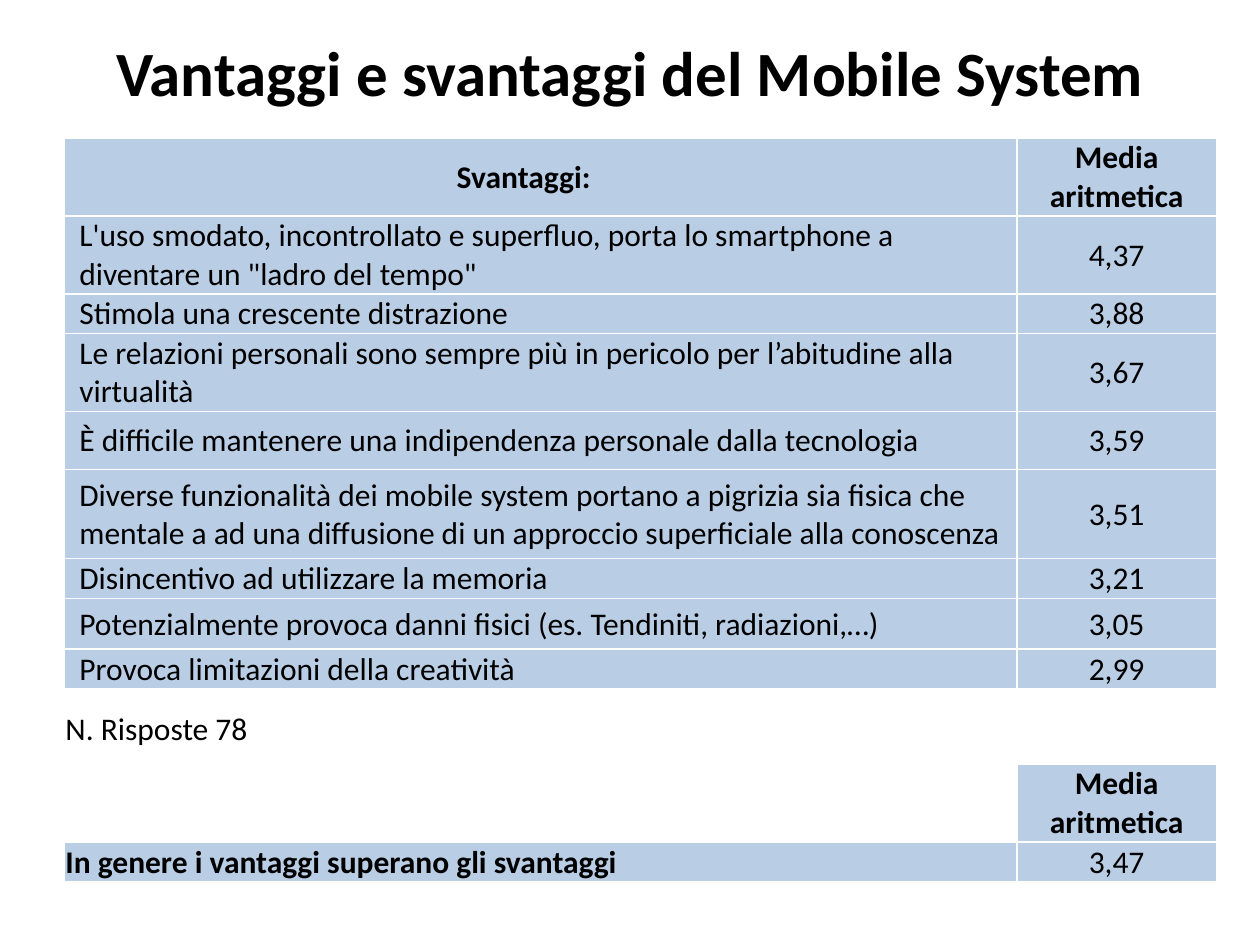
from lxml.etree import SubElement
from pptx import Presentation
from pptx.dml.color import RGBColor
from pptx.enum.text import MSO_ANCHOR as Anchor, PP_ALIGN as Align
from pptx.oxml import parse_xml
from pptx.oxml.ns import nsdecls, qn
from pptx.util import Cm, Pt

COLORS = {"band": "B9CDE5", "paper": "FFFFFF", "ink": "000000"}
TITLE = "Vantaggi e svantaggi del Mobile System"
MEAN = "Media aritmetica"
DRAWBACKS = [
    ("L'uso smodato, incontrollato e superfluo, porta lo smartphone a "
     "diventare un \"ladro del tempo\"", "4,37", 1.57),
    ("Stimola una crescente distrazione", "3,88", 0.8),
    ("Le relazioni personali sono sempre più in pericolo per l’abitudine alla virtualità",
     "3,67", 1.57),
    ("È difficile mantenere una indipendenza personale dalla tecnologia", "3,59", 1.17),
    ("Diverse funzionalità dei mobile system portano a pigrizia sia fisica che "
     "mentale a ad una diffusione di un approccio superficiale alla conoscenza", "3,51", 1.8),
    ("Disincentivo ad utilizzare la memoria", "3,21", 0.8),
    ("Potenzialmente provoca danni fisici (es. Tendiniti, radiazioni,…)", "3,05", 1.02),
    ("Provoca limitazioni della creatività", "2,99", 0.8),
]
ANSWERS = "N. Risposte 78"
OVERALL = ("In genere i vantaggi superano gli svantaggi", "3,47")
LEFT, COLUMNS = 1.3, (19.2, 4.02)
PLAIN = {"bold": False, "align": Align.LEFT, "fill": "band", "anchor": Anchor.MIDDLE,
         "left": 0.02, "right": 0.02}
ITEM = {**PLAIN, "left": 0.3}
VALUE = {**PLAIN, "align": Align.CENTER}
HEAD = {**VALUE, "bold": True}
BLANK = {**PLAIN, "fill": "paper"}


def set_font(font, size, bold):
    values = {"name": "Calibri", "size": Pt(size), "bold": bold}
    for key, value in values.items():
        setattr(font, key, value)
    font.color.rgb = RGBColor.from_string(COLORS["ink"])


def fill_cell(cell, text, style):
    cell.fill.solid()
    cell.fill.fore_color.rgb = RGBColor.from_string(COLORS[style["fill"]])
    layout = {"margin_left": Cm(style["left"]), "margin_right": Cm(style["right"]),
              "margin_top": Cm(0.02), "margin_bottom": 0, "vertical_anchor": style["anchor"]}
    for key, value in layout.items():
        setattr(cell, key, value)
    properties = cell._tc.get_or_add_tcPr()
    for position, side in enumerate("LRTB"):
        properties.insert(position, parse_xml(
            f'<a:ln{side} {nsdecls("a")} w="12700"><a:solidFill>'
            f'<a:srgbClr val="{COLORS["paper"]}"/></a:solidFill></a:ln{side}>'))
    paragraph = cell.text_frame.paragraphs[0]
    paragraph.alignment = style["align"]
    if text:
        run = paragraph.add_run()
        run.text = text
        set_font(run.font, 18, style["bold"])
    else:
        SubElement(paragraph._p, qn("a:endParaRPr"), sz="600")


def add_grid(slide, top, rows):
    height = sum(row[0] for row in rows)
    grid = slide.shapes.add_table(len(rows), len(COLUMNS), Cm(LEFT), Cm(top),
                                  Cm(sum(COLUMNS)), Cm(height)).table
    grid.first_row = grid.horz_banding = False
    for column, width in zip(grid.columns, COLUMNS):
        column.width = Cm(width)
    for index, (row_height, *entries) in enumerate(rows):
        grid.rows[index].height = Cm(row_height)
        for column, (text, style) in enumerate(entries):
            fill_cell(grid.cell(index, column), text, style)


def main():
    """Build the slide on the drawbacks of mobile systems."""
    deck = Presentation()
    deck.slide_width, deck.slide_height = Cm(25.4), Cm(19.05)
    slide = deck.slides.add_slide(deck.slide_layouts[5])

    title = slide.shapes.title
    title.left, title.top, title.width, title.height = Cm(1.27), Cm(0.36), Cm(22.86), Cm(2.16)
    title.text_frame.text = TITLE
    title.text_frame.vertical_anchor = Anchor.MIDDLE
    heading = title.text_frame.paragraphs[0]
    heading.alignment = Align.CENTER
    set_font(heading.runs[0].font, 36, True)

    blank = ("", BLANK)
    add_grid(slide, 2.78, [
        (1.57, ("Svantaggi:", {**HEAD, "right": 0.71}), (MEAN, HEAD)),
        *((height, (text, ITEM), (mean, VALUE)) for text, mean, height in DRAWBACKS),
        (0.41, blank, blank),
        (0.8, (ANSWERS, {**BLANK, "anchor": Anchor.BOTTOM}), blank),
    ])
    add_grid(slide, 15.4, [
        (1.57, blank, (MEAN, HEAD)),
        (0.8, (OVERALL[0], {**PLAIN, "bold": True}), (OVERALL[1], VALUE)),
    ])
    deck.save("out.pptx")


if __name__ == "__main__":
    main()
